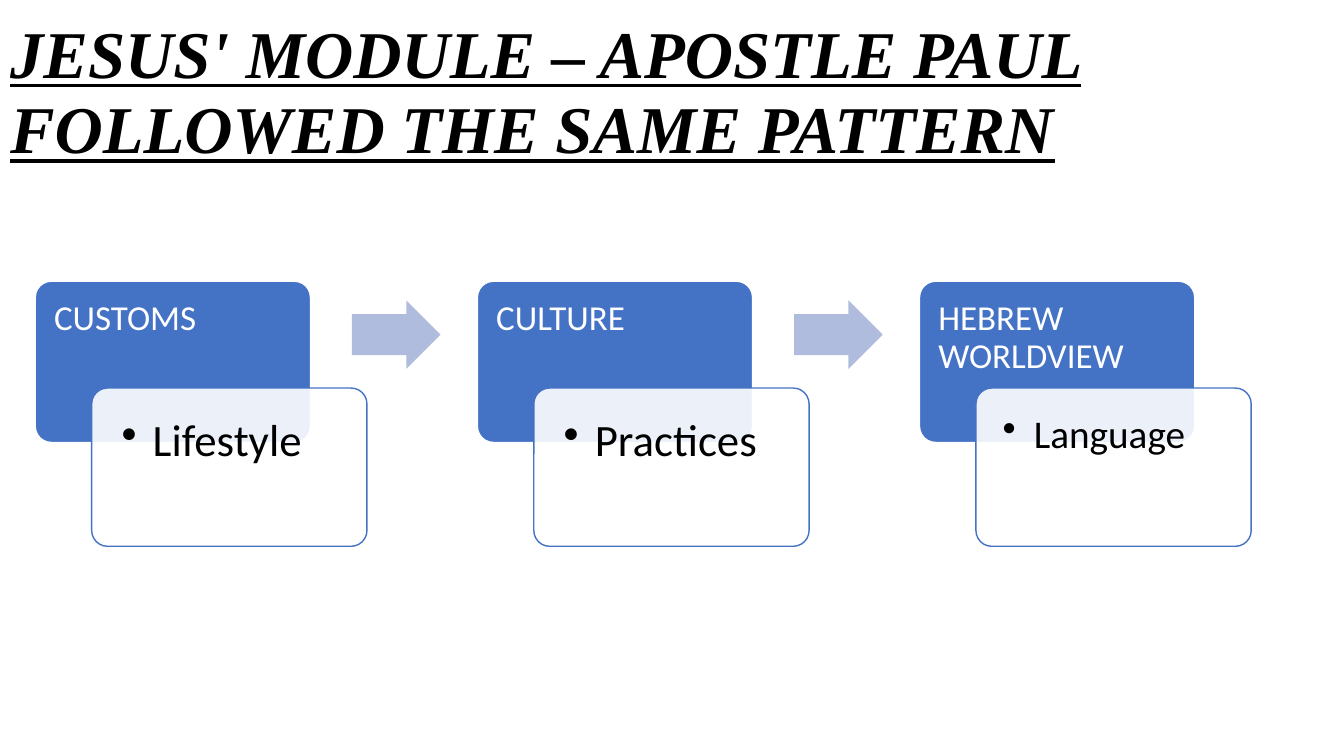
from lxml.etree import SubElement
from pptx import Presentation
from pptx.dml.color import RGBColor
from pptx.enum.shapes import MSO_SHAPE as SHAPE
from pptx.enum.text import MSO_ANCHOR as ANCHOR, MSO_AUTO_SIZE as AUTO, PP_ALIGN as ALIGN
from pptx.oxml.ns import qn
from pptx.util import Inches, Pt

BLUE = RGBColor(0x44, 0x72, 0xC4)
PALE_BLUE = RGBColor(0xB0, 0xBC, 0xDE)
WHITE = RGBColor(0xFF, 0xFF, 0xFF)
BLACK = RGBColor(0, 0, 0)

STEPS = [
    ("CUSTOMS", "Lifestyle", 32, 0.25),
    ("CULTURE", "Practices", 32, 0.25),
    ("HEBREW WORLDVIEW", "Language", 28, 0.22),
]
LEFT, PITCH = 0.35, 4.385
BOX_W = 2.73


def add_run(p, text, size, color, font="Calibri"):
    """Add one formatted run to a paragraph."""
    r = p.add_run()
    r.text = text
    r.font.name = font
    r.font.size = Pt(size)
    r.font.color.rgb = color
    return r


def add_title(s, text):
    """Place and format the title placeholder."""
    sp = s.shapes.title
    sp.left, sp.top, sp.width, sp.height = 0, 0, Inches(13.33), Inches(1.85)
    tf = sp.text_frame
    tf.word_wrap = True
    tf.auto_size = AUTO.NONE
    tf.vertical_anchor = ANCHOR.MIDDLE
    p = tf.paragraphs[0]
    p.alignment = ALIGN.LEFT
    p.line_spacing = 0.94
    r = add_run(p, text, 47.7, BLACK, "Times New Roman")
    r.font.bold = r.font.italic = r.font.underline = True


def add_filled(s, kind, x, y, w, h, fill, adjustments):
    """Add a preset shape with a solid fill and no shadow."""
    sp = s.shapes.add_shape(kind, Inches(x), Inches(y), Inches(w), Inches(h))
    sp.shadow.inherit = False
    sp.fill.solid()
    sp.fill.fore_color.rgb = fill
    for i, value in enumerate(adjustments):
        sp.adjustments[i] = value
    return sp


def add_card(s, x, y, h, fill, line, inset):
    """Add a rounded card and return it with its first paragraph."""
    sp = add_filled(s, SHAPE.ROUNDED_RECTANGLE, x, y, BOX_W, h, fill, [0.1])
    sp.line.color.rgb = line
    sp.line.width = Pt(1)
    tf = sp.text_frame
    tf.word_wrap = True
    tf.vertical_anchor = ANCHOR.TOP
    tf.margin_left = tf.margin_top = tf.margin_right = tf.margin_bottom = Inches(inset)
    p = tf.paragraphs[0]
    p.alignment = ALIGN.LEFT
    p.line_spacing = 0.9
    return sp, p


def add_heading_card(s, x, text):
    """Add the blue card that names a step."""
    sp, p = add_card(s, x, 2.79, 1.6, BLUE, WHITE, 0.14)
    add_run(p, text, 25, WHITE)


def add_detail_card(s, x, text, size, inset):
    """Add the translucent card with a bulleted detail."""
    sp, p = add_card(s, x, 3.85, 1.57, WHITE, BLUE, inset)
    color = sp.fill._xPr.find(qn("a:solidFill"))[0]
    SubElement(color, qn("a:alpha"), val="90000")
    pPr = p._p.get_or_add_pPr()
    pPr.set("marL", str(Inches(0.31)))
    pPr.set("indent", str(-Inches(0.31)))
    SubElement(pPr, qn("a:buChar"), char="•")
    add_run(p, text, size, BLACK)


def add_arrow(s, x):
    """Add the arrow that leads to the next step."""
    sp = add_filled(s, SHAPE.RIGHT_ARROW, x, 2.98, 0.88, 0.68, PALE_BLUE, [0.6, 0.5])
    sp.line.fill.background()


def main():
    """Build the slide and save it."""
    prs = Presentation()
    prs.slide_width, prs.slide_height = Inches(13.33), Inches(7.5)
    s = prs.slides.add_slide(prs.slide_layouts[5])
    add_title(s, "JESUS' MODULE – APOSTLE PAUL FOLLOWED THE SAME PATTERN")
    for i, (heading, detail, size, inset) in enumerate(STEPS):
        x = LEFT + i * PITCH
        add_heading_card(s, x, heading)
        add_detail_card(s, x + 0.56, detail, size, inset)
        if i < len(STEPS) - 1:
            add_arrow(s, x + 3.14)
    prs.save("out.pptx")


if __name__ == "__main__":
    main()
